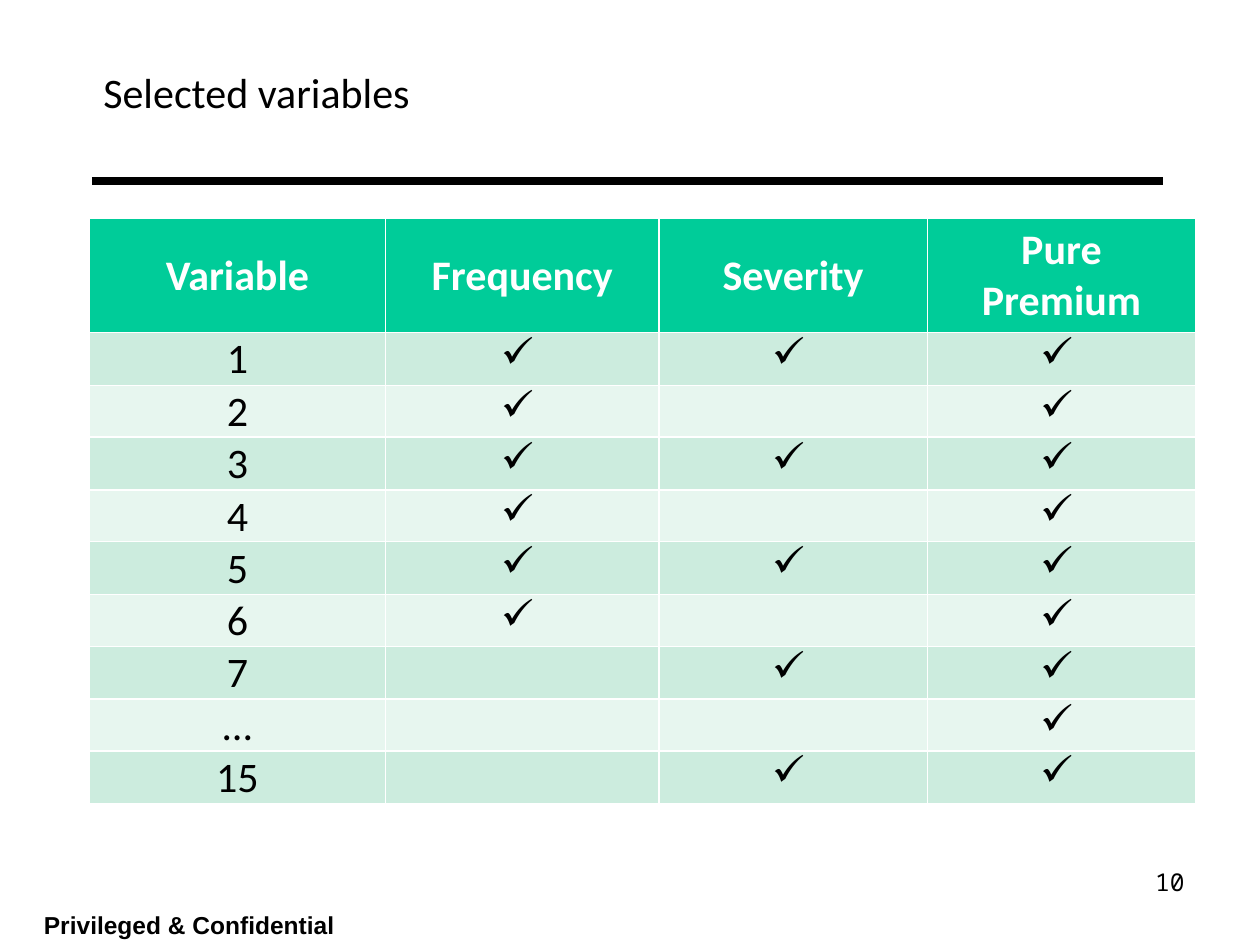
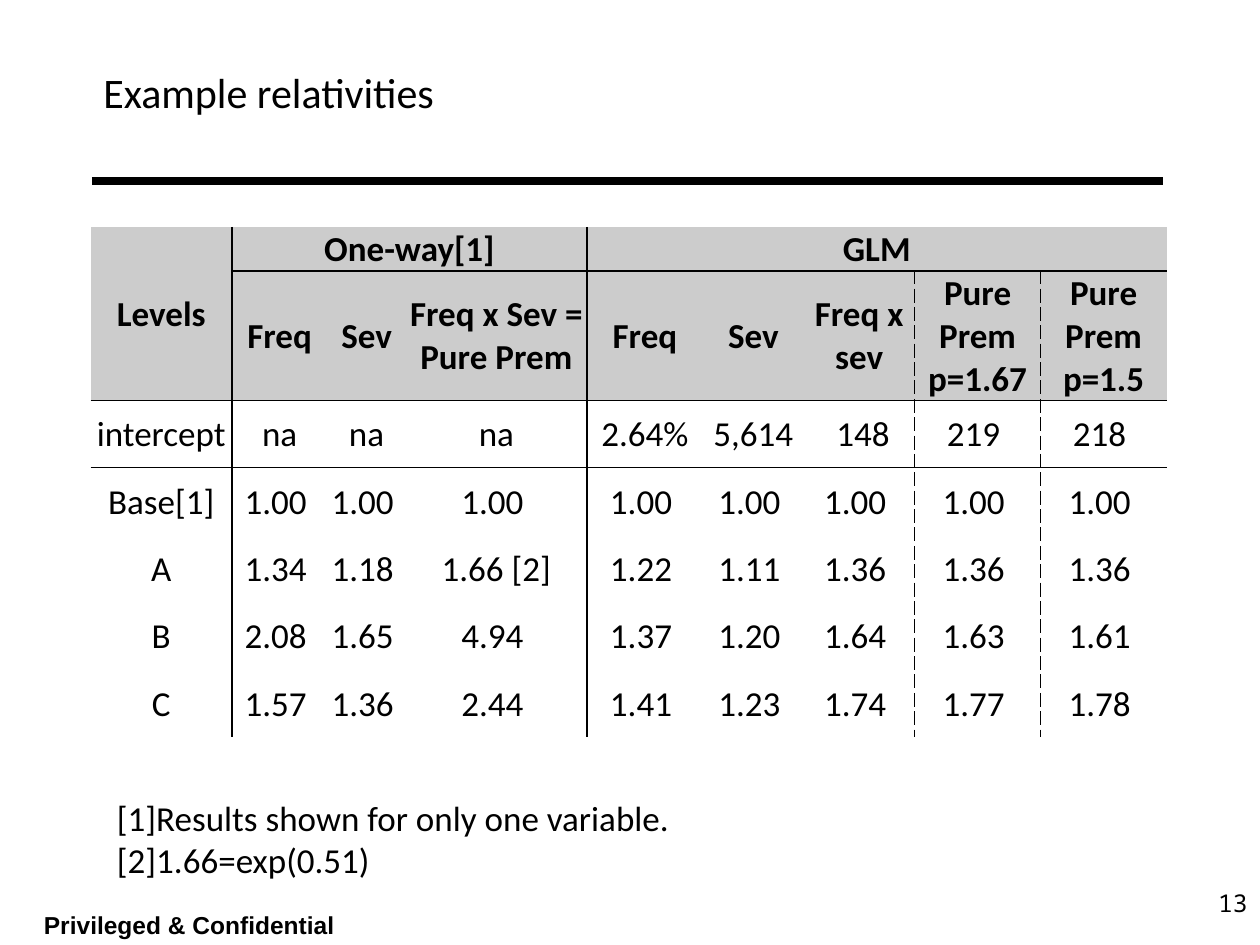
from pptx import Presentation
from pptx import util as u
from pptx.dml.color import RGBColor
from pptx.enum import shapes, text
from pptx.oxml import parse_xml
from pptx.oxml.ns import nsdecls, qn
from lxml import etree

BLACK, WHITE, GREY = "000000", "FFFFFF", "CCCCCC"
GREEN, BANDS = "00CC99", ("CCECDE", "E7F6EF")
FONT, MONO = "Calibri", "Noto Sans Mono"
LEFT, CENTER, RIGHT = (text.PP_ALIGN.LEFT, text.PP_ALIGN.CENTER,
                       text.PP_ALIGN.RIGHT)
PLAIN = "{2D5ABB26-0587-4C30-8999-92F81FD0307C}"  # no style, no grid

FOOT = "Privileged & Confidential"
TICK = "✓"
HEADS = ["Variable", "Frequency", "Severity", "Pure Premium"]
# one flag a column: frequency, severity, pure premium
PICKS = {"1": (1, 1, 1), "2": (1, 0, 1), "3": (1, 1, 1), "4": (1, 0, 1),
         "5": (1, 1, 1), "6": (1, 0, 1), "7": (0, 1, 1), "…": (0, 0, 1),
         "15": (0, 1, 1)}
LEVELS = [
    ["Levels", "One-way[1]", "", "", "GLM", "", "", "", ""],
    ["", "Freq", "Sev", "Freq x Sev = Pure Prem", "Freq", "Sev",
     "Freq x sev", "Pure Prem p=1.67", "Pure Prem p=1.5"],
    ["intercept", "na", "na", "na", "2.64%", "5,614", " 148", "219 ", "218 "],
    ["Base[1]"] + ["1.00"] * 8,
    ["A", "1.34", "1.18", "1.66 [2]", "1.22", "1.11", "1.36", "1.36", "1.36"],
    ["B", "2.08", "1.65", "4.94", "1.37", "1.20", "1.64", "1.63", "1.61"],
    ["C", "1.57", "1.36", "2.44", "1.41", "1.23", "1.74", "1.77", "1.78"],
]
SPANS = [((0, 0), (1, 0)), ((0, 1), (0, 3)), ((0, 4), (0, 8))]
NOTES = ["[1]Results shown for only one variable.", "[2]1.66=exp(0.51)"]


def color(code):
    return RGBColor.from_string(code)


def write(frame, lines, size=24, font=FONT, ink=BLACK, bold=False, align=LEFT,
          mark=None):
    for i, line in enumerate([lines] if isinstance(lines, str) else lines):
        para = frame.add_paragraph() if i else frame.paragraphs[0]
        para.text = line
        para.alignment = align
        if mark:
            props = para._p.get_or_add_pPr()
            props.set("marL", "0")
            props.set("indent", "0")
            etree.SubElement(props, qn("a:buChar")).set("char", mark)
        para.font.size = u.Pt(size)
        para.font.name = font
        para.font.bold = bold
        para.font.color.rgb = color(ink)


def label(slide, box, lines, **look):
    frame = slide.shapes.add_textbox(*map(u.Inches, box)).text_frame
    frame.word_wrap = True
    write(frame, lines, **look)


def start(deck, title, page, spot):
    """Add a slide with the title, rule, footer and page number."""
    slide = deck.slides.add_slide(deck.slide_layouts[5])
    head = slide.shapes.title
    head.left, head.top, head.width, head.height = map(
        u.Inches, (0.72, 0, 7.34, 1.46))
    head.text_frame.vertical_anchor = text.MSO_ANCHOR.MIDDLE
    write(head.text_frame, title)
    rule = slide.shapes.add_connector(
        shapes.MSO_CONNECTOR.STRAIGHT,
        *map(u.Inches, (0.73, 1.44, 9.23, 1.44)))
    rule.line.color.rgb = color(BLACK)
    rule.line.width = u.Pt(4.5)
    etree.SubElement(rule._element.spPr, qn("a:effectLst"))
    label(slide, (0.25, 7.17, 2.58, 0.33), FOOT, size=14, font="Arial",
          bold=True)
    label(slide, spot, page, size=14, font=MONO, align=RIGHT)
    return slide


def grid(slide, left, top, cols, rows):
    box = map(u.Inches, (left, top, sum(cols), sum(rows)))
    table = slide.shapes.add_table(len(rows), len(cols), *box).table
    table._tbl.tblPr.find(qn("a:tableStyleId")).text = PLAIN
    table.first_row = table.horz_banding = False
    for col, width in zip(table.columns, cols):
        col.width = u.Inches(width)
    for row, height in zip(table.rows, rows):
        row.height = u.Inches(height)
    return table


def fill(cell, words, back, pad=0.01, **look):
    cell.fill.solid()
    cell.fill.fore_color.rgb = color(back)
    cell.vertical_anchor = text.MSO_ANCHOR.MIDDLE
    cell.margin_left = cell.margin_right = u.Inches(pad)
    cell.margin_top, cell.margin_bottom = u.Inches(0.01), 0
    write(cell.text_frame, words, align=CENTER, **look)


def edge(cell, dashes, ink=BLACK):
    """Set the left, right, top and bottom dash; None hides that side."""
    props = cell._tc.get_or_add_tcPr()
    for i, (side, dash) in enumerate(zip("LRTB", dashes)):
        paint = (f'<a:solidFill><a:srgbClr val="{ink}"/></a:solidFill>'
                 f'<a:prstDash val="{dash}"/>' if dash else "<a:noFill/>")
        props.insert(i, parse_xml(
            f'<a:ln{side} {nsdecls("a")} w="12700">{paint}</a:ln{side}>'))


def picks(deck):
    slide = start(deck, "Selected variables", "10", (7.17, 6.83, 2.33, 0.52))
    table = grid(slide, 0.71, 1.73, [2.35, 2.17, 2.13, 2.13],
                 [0.91] + [0.41 + (i + 1) % 2 / 100 for i in range(len(PICKS))])
    for c, words in enumerate(HEADS):
        fill(table.cell(0, c), words, GREEN, pad=0.1, ink=WHITE, bold=True)
    for r, (name, flags) in enumerate(PICKS.items(), 1):
        back = BANDS[(r - 1) % 2]
        fill(table.cell(r, 0), name, back)
        for c, flag in enumerate(flags, 1):
            fill(table.cell(r, c), " " if flag else "", back,
                 mark=TICK if flag else None)
    for cell in table.iter_cells():
        edge(cell, ["solid"] * 4, WHITE)


def upright(bar, r):
    """Dash of the vertical line before column bar in row r."""
    if bar in (1, 4):
        return "solid"
    return "sysDash" if bar in (7, 8) and r else None


def level(bar, c):
    """Dash of the horizontal line above row bar in column c."""
    return "solid" if bar in (2, 3) or bar == 1 and c else None


def levels(deck):
    slide = start(deck, "Example relativities", "13", (7.92, 7, 2.08, 0.5))
    table = grid(slide, 0.72, 1.8,
                 [1.12, 0.76, 0.62, 1.44, 0.92, 0.8, 0.88, 1, 1],
                 [0.35, 1.03, 0.53, 0.54, 0.53, 0.54, 0.53])
    for first, last in SPANS:
        table.cell(*first).merge(table.cell(*last))
    for r, row in enumerate(LEVELS):
        for c, words in enumerate(row):
            cell = table.cell(r, c)
            if r > 2 and words.replace(".", "").isdigit():
                words += " "
            fill(cell, words, GREY if r < 2 else WHITE, size=20, bold=r < 2)
            edge(cell, [upright(c, r), upright(c + 1, r),
                        level(r, c), level(r + 1, c)])
    label(slide, (0.83, 6.27, 7.22, 0.77), NOTES, size=20)


def main():
    deck = Presentation()
    deck.slide_width, deck.slide_height = u.Inches(10), u.Inches(7.5)
    picks(deck)
    levels(deck)
    deck.save("out.pptx")


if __name__ == "__main__":
    main()
